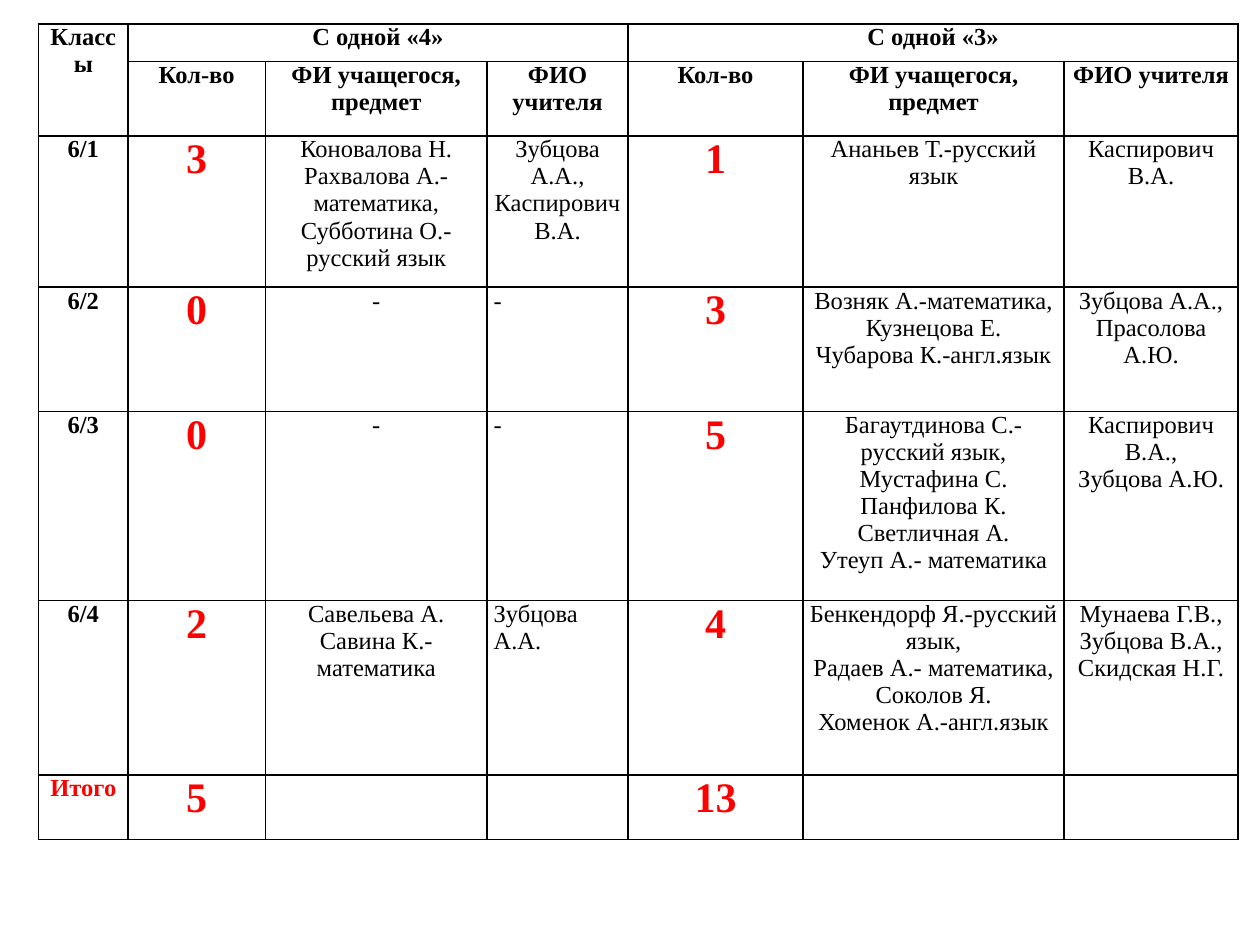
import pptx
import pptx.util
import pptx.dml.color
import pptx.enum.text
import pptx.oxml.ns
import lxml.etree
from pptx.util import Cm

ROWS = [
    ["Классы", "С одной «4»", "", "", "С одной «3»", "", ""],
    ["", *["Кол-во", "ФИ учащегося, предмет", "ФИО учителя"] * 2],
    ["6/1", "3",
     "Коновалова Н.\nРахвалова А.- математика,\nСубботина О.-русский язык",
     "Зубцова А.А.,\nКаспирович В.А.", "1",
     "Ананьев Т.-русский язык", "Каспирович В.А."],
    ["6/2", "0", "-", "-", "3",
     "Возняк А.-математика,\nКузнецова Е.\nЧубарова К.-англ.язык",
     "Зубцова А.А.,\nПрасолова А.Ю."],
    ["6/3", "0", "-", "-", "5",
     "Багаутдинова С.-русский язык,\nМустафина С.\nПанфилова К.\n"
     "Светличная А.\nУтеуп А.- математика",
     "Каспирович В.А.,\nЗубцова А.Ю."],
    ["6/4", "2", "Савельева А.\nСавина К.-математика", "Зубцова А.А.", "4",
     "Бенкендорф Я.-русский язык,\nРадаев А.- математика,\n"
     "Соколов Я.\nХоменок А.-англ.язык",
     "Мунаева Г.В.,\nЗубцова В.А.,\nСкидская Н.Г."],
    ["Итого", "5", "", "", "13", "", ""],
]
WIDTHS = [1.8, 2.77, 4.47, 2.84, 3.53, 5.26, 3.51]
HEIGHTS = [0.76, 1.5, 3.05, 2.51, 3.81, 3.51, 1.3]
SPANS = [((0, 0), (1, 0)), ((0, 1), (0, 3)), ((0, 4), (0, 6))]


def color(hexa):
    return pptx.dml.color.RGBColor.from_string(hexa)


class Page:
    font = "Times New Roman"
    ink = "000000"
    mark = "FF0000"
    paper = "FFFFFF"
    size = 14
    big = 24

    def __init__(self, deck):
        self.slide = deck.slides.add_slide(deck.slide_layouts[6])

    def edge(self, cell):
        qn = pptx.oxml.ns.qn
        props = cell._tc.get_or_add_tcPr()
        for side in ("lnL", "lnR", "lnT", "lnB"):
            line = lxml.etree.SubElement(props, qn("a:" + side), w="12700")
            fill = lxml.etree.SubElement(line, qn("a:solidFill"))
            lxml.etree.SubElement(fill, qn("a:srgbClr"), val=self.ink)

    def label(self, cell, text, row, col):
        count = row > 1 and col in (1, 4)
        total = row == len(ROWS) - 1
        left = col == 3 and row > 2
        align = pptx.enum.text.PP_ALIGN
        frame = cell.text_frame
        for i, part in enumerate(text.split("\n")):
            para = frame.add_paragraph() if i else frame.paragraphs[0]
            para.alignment = align.LEFT if left else align.CENTER
            run = para.add_run()
            run.text = part
            run.font.name = self.font
            run.font.size = pptx.util.Pt(self.big if count else self.size)
            run.font.bold = row < 2 or col == 0 or count
            run.font.color.rgb = color(self.mark if count or total else self.ink)

    def table(self, left, top, rows, widths, heights, spans):
        grid = self.slide.shapes.add_table(
            len(rows), len(widths), Cm(left), Cm(top),
            Cm(sum(widths)), Cm(sum(heights))).table
        for col, width in zip(grid.columns, widths):
            col.width = Cm(width)
        for row, height in zip(grid.rows, heights):
            row.height = Cm(height)
        for r, texts in enumerate(rows):
            for c, text in enumerate(texts):
                cell = grid.cell(r, c)
                cell.margin_left = cell.margin_right = Cm(0.13)
                cell.margin_top = cell.margin_bottom = 0
                self.edge(cell)
                cell.fill.solid()
                cell.fill.fore_color.rgb = color(self.paper)
                if text:
                    self.label(cell, text, r, c)
        for start, end in spans:
            grid.cell(*start).merge(grid.cell(*end))


def main():
    deck = pptx.Presentation()
    deck.slide_width, deck.slide_height = Cm(25.4), Cm(19.05)
    Page(deck).table(0.78, 0.48, ROWS, WIDTHS, HEIGHTS, SPANS)
    deck.save("out.pptx")


if __name__ == "__main__":
    main()
